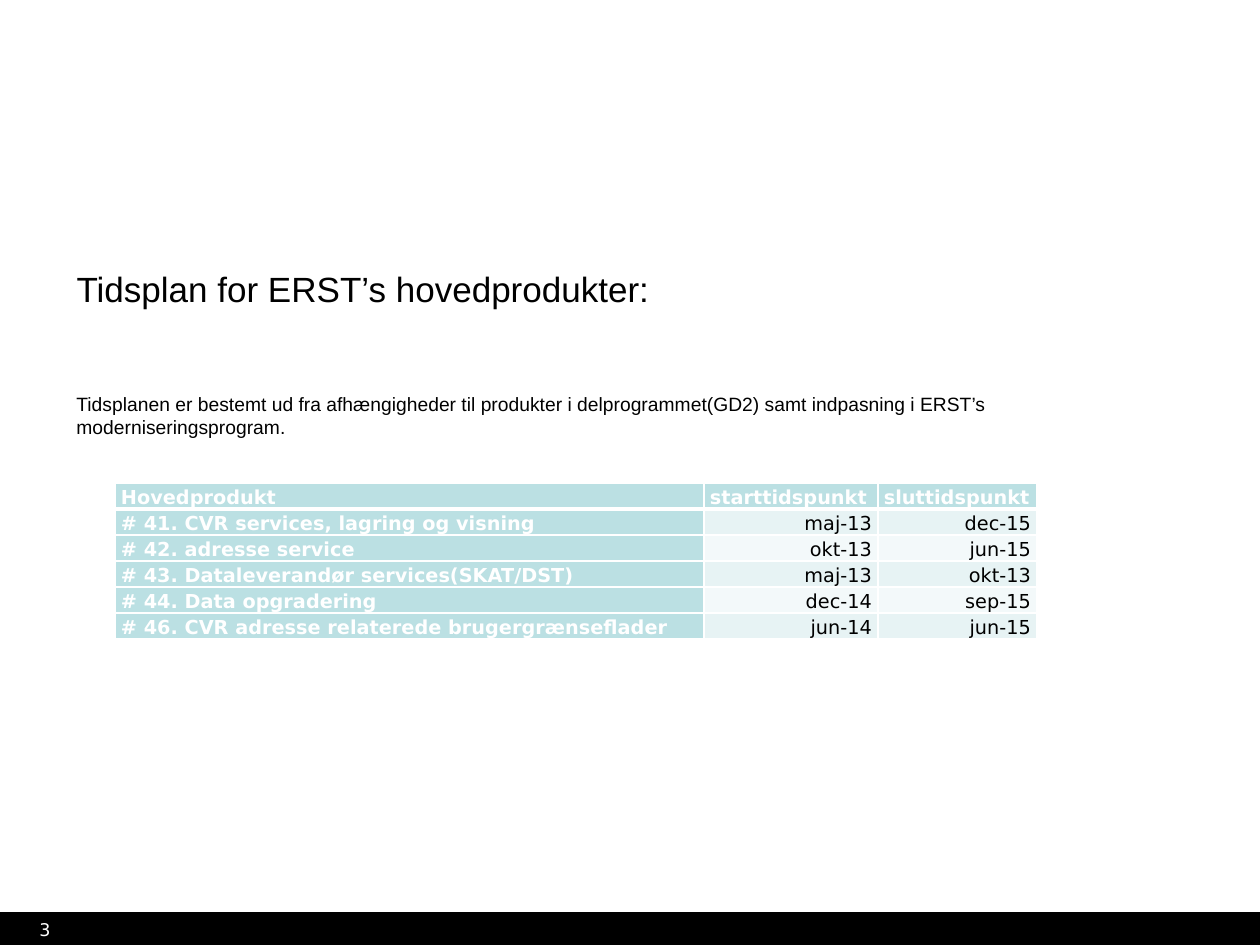
"""Build the slide with the schedule of main products."""
import pptx
import pptx.dml.color
import pptx.enum.shapes
import pptx.enum.text
import pptx.oxml
import pptx.oxml.ns
import pptx.util

TITLE = "Tidsplan for ERST’s hovedprodukter:"
INTRO = ("Tidsplanen er bestemt ud fra afhængigheder til produkter i "
         "delprogrammet(GD2) samt indpasning i ERST’s moderniseringsprogram.")
PAGE_NUMBER = "3"
SCHEDULE = [
    ("Hovedprodukt", "starttidspunkt", "sluttidspunkt"),
    ("# 41. CVR services, lagring og visning", "maj-13", "dec-15"),
    ("# 42. adresse service", "okt-13", "jun-15"),
    ("# 43. Dataleverandør services(SKAT/DST)", "maj-13", "okt-13"),
    ("# 44. Data opgradering", "dec-14", "sep-15"),
    ("# 46. CVR adresse relaterede brugergrænseflader", "jun-14", "jun-15"),
]
COLUMN_WIDTHS = (589, 174, 159)
ROW_HEIGHT = 26

THEME = {
    "black": "000000", "white": "FFFFFF", "accent": "BBE0E3",
    "bands": ("E7F3F4", "F3F9FA"),
    "text_font": "Arial", "data_font": "DejaVu Sans",
    "title_size": 20, "text_size": 11, "number_size": 10,
    "rule": 1, "header_rule": 3,
}
ALIGN = pptx.enum.text.PP_ALIGN
ANCHOR = pptx.enum.text.MSO_ANCHOR


def px(length):
    return pptx.util.Emu(round(length * 914400 / 126))


def rgb(colour):
    return pptx.dml.color.RGBColor.from_string(colour)


def write(frame, text, *, size, font=THEME["text_font"], colour=THEME["black"],
          bold=False, align=ALIGN.LEFT):
    paragraph = frame.paragraphs[0]
    paragraph.alignment = align
    run = paragraph.add_run()
    run.text = text
    run.font.name = font
    run.font.size = pptx.util.Pt(size)
    run.font.bold = bold
    run.font.color.rgb = rgb(colour)


def add_text(slide, box, text, anchor, **style):
    frame = slide.shapes.add_textbox(*map(px, box)).text_frame
    frame.word_wrap = True
    frame.vertical_anchor = anchor
    write(frame, text, **style)


def set_borders(cell, widths):
    properties = cell._tc.get_or_add_tcPr()
    for position, (side, width) in enumerate(widths.items()):
        properties.insert(position, pptx.oxml.parse_xml(
            f'<a:ln{side} {pptx.oxml.ns.nsdecls("a")} w="{pptx.util.Pt(width)}">'
            f'<a:solidFill><a:srgbClr val="{THEME["white"]}"/></a:solidFill></a:ln{side}>'))


def add_schedule(slide, left, top):
    table = slide.shapes.add_table(
        len(SCHEDULE), len(COLUMN_WIDTHS), px(left), px(top),
        px(sum(COLUMN_WIDTHS)), px(ROW_HEIGHT * len(SCHEDULE))).table
    table.horz_banding = False
    for column, width in zip(table.columns, COLUMN_WIDTHS):
        column.width = px(width)
    for row, values in enumerate(SCHEDULE):
        table.rows[row].height = px(ROW_HEIGHT)
        for column, value in enumerate(values):
            cell = table.cell(row, column)
            heading = row == 0 or column == 0
            cell.margin_left = cell.margin_right = px(6)
            cell.margin_top = cell.margin_bottom = 0
            cell.vertical_anchor = ANCHOR.BOTTOM
            cell.fill.solid()
            cell.fill.fore_color.rgb = rgb(
                THEME["accent"] if heading else THEME["bands"][(row - 1) % 2])
            rule, header_rule = THEME["rule"], THEME["header_rule"]
            set_borders(cell, {"L": rule, "R": rule,
                               "T": header_rule if row == 1 else rule,
                               "B": header_rule if row == 0 else rule})
            write(cell.text_frame, value, size=THEME["text_size"],
                  font=THEME["data_font"], bold=heading,
                  colour=THEME["white"] if heading else THEME["black"],
                  align=ALIGN.LEFT if heading else ALIGN.RIGHT)


def main():
    deck = pptx.Presentation()
    deck.slide_width, deck.slide_height = px(1260), px(945)
    slide = deck.slides.add_slide(deck.slide_layouts[5])

    footer = slide.shapes.add_shape(
        pptx.enum.shapes.MSO_SHAPE.RECTANGLE, *map(px, (0, 913, 1260, 32)))
    footer.shadow.inherit = False
    footer.fill.solid()
    footer.fill.fore_color.rgb = rgb(THEME["black"])
    footer.line.color.rgb = rgb(THEME["black"])
    footer.line.width = pptx.util.Pt(0.75)

    title = slide.shapes.title
    title.left, title.top, title.width, title.height = map(px, (64, 233, 1134, 110))
    title.text_frame.auto_size = pptx.enum.text.MSO_AUTO_SIZE.NONE
    title.text_frame.vertical_anchor = ANCHOR.MIDDLE
    write(title.text_frame, TITLE, size=THEME["title_size"])

    add_schedule(slide, 115, 483)
    add_text(slide, (0, 913, 63, 32), PAGE_NUMBER, ANCHOR.TOP,
             size=THEME["number_size"], font=THEME["data_font"],
             colour=THEME["white"], align=ALIGN.RIGHT)
    add_text(slide, (64, 386, 1012, 59), INTRO, ANCHOR.MIDDLE,
             size=THEME["text_size"])
    deck.save("out.pptx")


if __name__ == "__main__":
    main()
